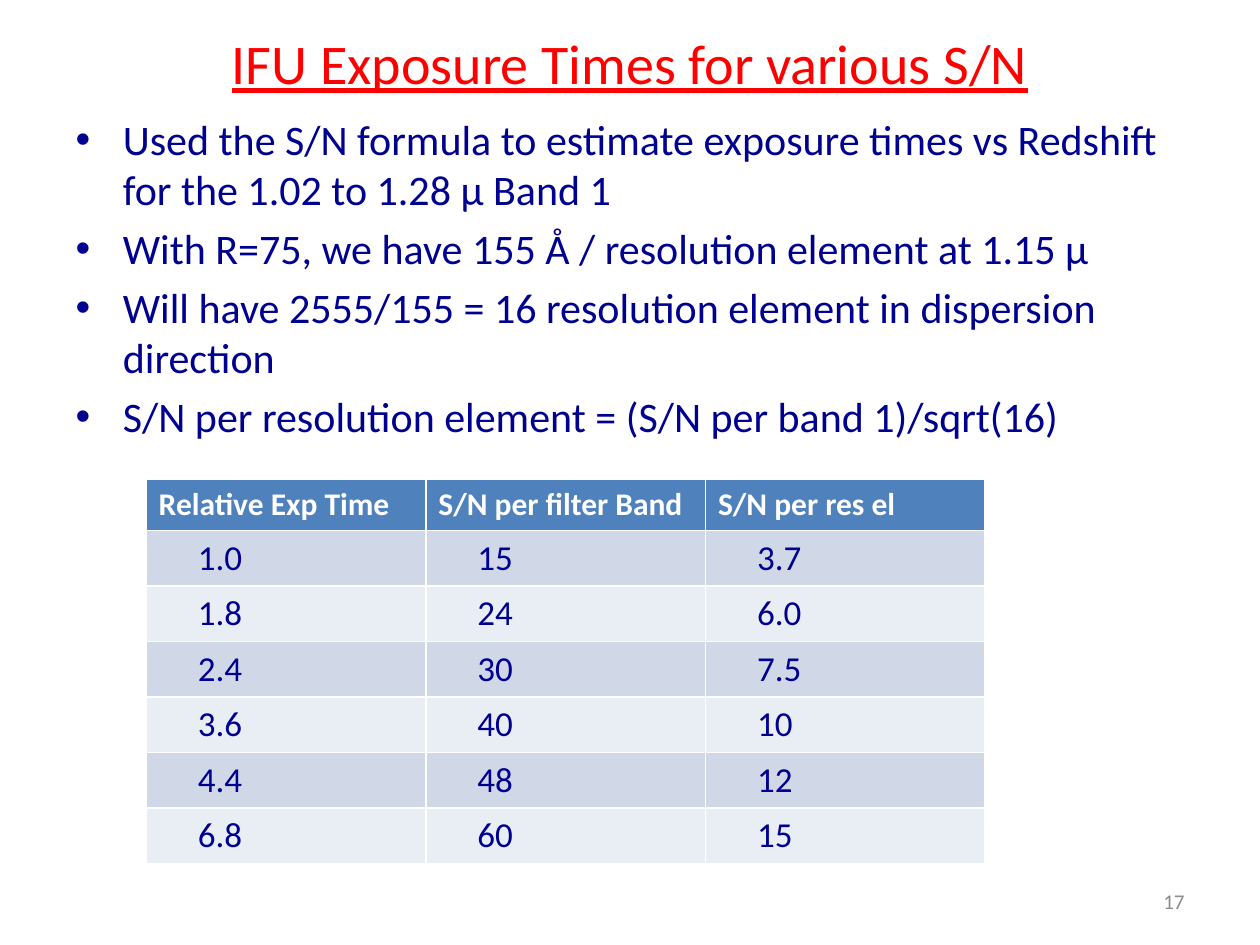
"""Build the slide on IFU exposure times for various S/N."""
from pptx import Presentation
from pptx.dml.color import RGBColor
from pptx.enum.text import MSO_ANCHOR, MSO_AUTO_SIZE, PP_ALIGN
from pptx.util import Inches, Pt

COLORS = {
    "title": "FF0000",
    "text": "000090",
    "number": "8C8C8C",
    "header": "4F81BD",
    "header_text": "FFFFFF",
    "odd": "D0D8E8",
    "even": "E9EDF4",
}
BULLETS = [
    "Used the S/N formula to estimate exposure times vs Redshift for the 1.02 to 1.28 μ Band 1",
    "With R=75, we have 155 Å / resolution element at 1.15 μ",
    "Will have 2555/155 = 16 resolution element in dispersion direction",
    "S/N per resolution element = (S/N per band 1)/sqrt(16)",
]
ROWS = [
    ("Relative Exp Time", "S/N per filter Band", "S/N per res el"),
    ("1.0", "15", "3.7"),
    ("1.8", "24", "6.0"),
    ("2.4", "30", "7.5"),
    ("3.6", "40", "10"),
    ("4.4", "48", "12"),
    ("6.8", "60", "15"),
]


def add_text(para, text, size, color, bold=False):
    span = para.add_run()
    span.text = text
    span.font.name = "Calibri"
    span.font.size = Pt(size)
    span.font.bold = bold
    span.font.color.rgb = RGBColor.from_string(COLORS[color])
    return span


def place(box, left, top, width, height):
    box.left, box.top = Inches(left), Inches(top)
    box.width, box.height = Inches(width), Inches(height)
    box.text_frame.word_wrap = True
    box.text_frame.auto_size = MSO_AUTO_SIZE.NONE


deck = Presentation()
deck.slide_width, deck.slide_height = Inches(10), Inches(7.5)
page = deck.slides.add_slide(deck.slide_layouts[1])

title = page.shapes.title
place(title, 0.5, -0.13, 9, 1.25)
title.text_frame.vertical_anchor = MSO_ANCHOR.MIDDLE
para = title.text_frame.paragraphs[0]
para.alignment = PP_ALIGN.CENTER
add_text(para, "IFU Exposure Times for various S/N", 32, "title").font.underline = True

body = page.placeholders[1]
place(body, 0.5, 0.85, 9, 6.1)
for index, bullet in enumerate(BULLETS):
    frame = body.text_frame
    para = frame.add_paragraph() if index else frame.paragraphs[0]
    add_text(para, bullet, 24, "text")

number = page.shapes.add_textbox(0, 0, 0, 0)
place(number, 7.17, 6.95, 2.33, 0.4)
number.text_frame.vertical_anchor = MSO_ANCHOR.MIDDLE
para = number.text_frame.paragraphs[0]
para.alignment = PP_ALIGN.RIGHT
add_text(para, "17", 12, "number")

table = page.shapes.add_table(
    len(ROWS), 3, Inches(1.16), Inches(3.8), Inches(6.67), Inches(3.05)
).table
for column in table.columns:
    column.width = Inches(2.22)
for row, values in enumerate(ROWS):
    is_header = row == 0
    table.rows[row].height = Inches(0.41 if is_header else 0.44)
    fill = "header" if is_header else ("even", "odd")[row % 2]
    for column, value in enumerate(values):
        cell = table.cell(row, column)
        cell.fill.solid()
        cell.fill.fore_color.rgb = RGBColor.from_string(COLORS[fill])
        para = cell.text_frame.paragraphs[0]
        if is_header:
            add_text(para, value, 18, "header_text", bold=True)
        else:
            cell.margin_left = Inches(0.41)
            add_text(para, value, 20, "text")

deck.save("out.pptx")
